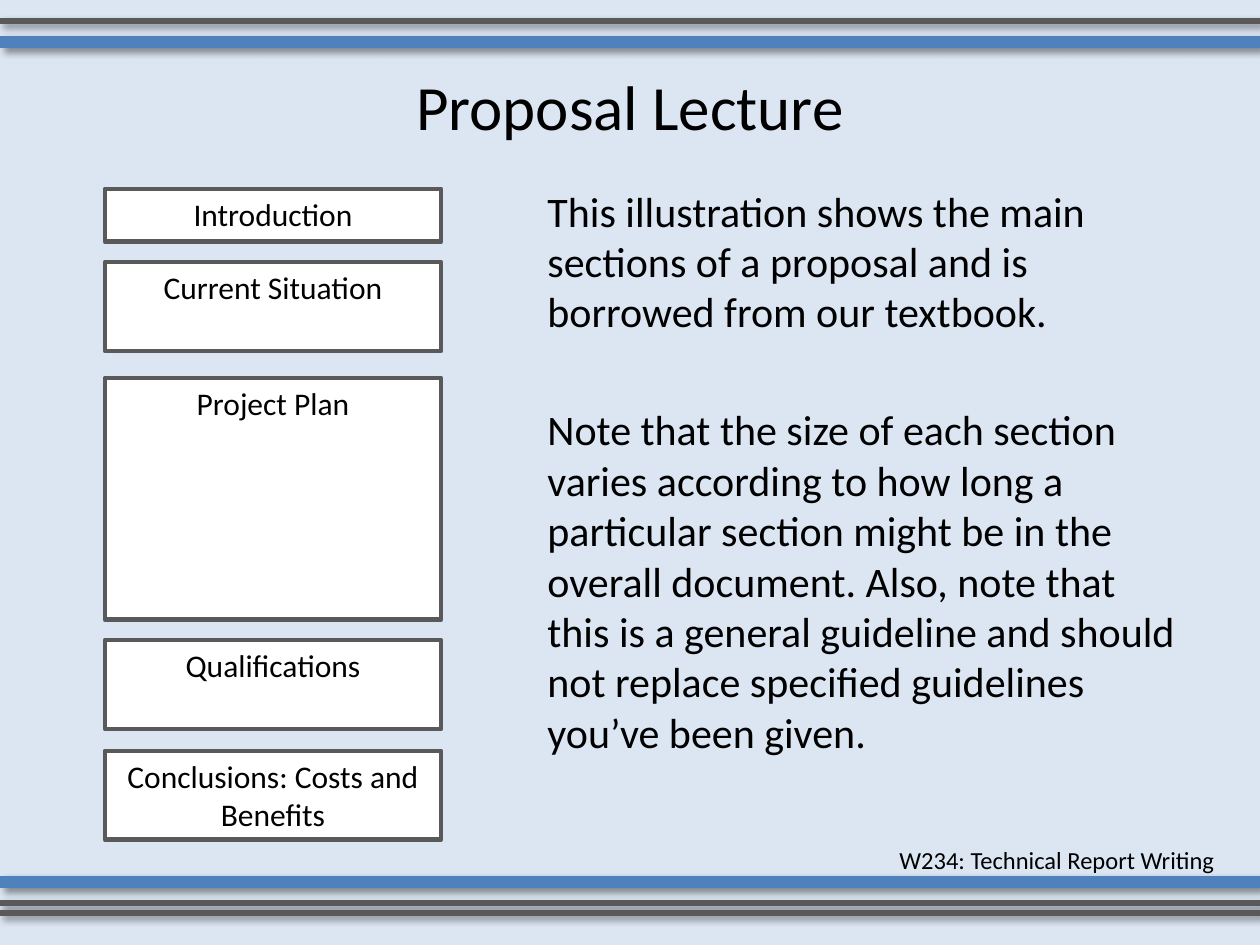
from dataclasses import dataclass

from lxml.etree import SubElement
from pptx import Presentation
from pptx.dml.color import RGBColor as Rgb
from pptx.enum.shapes import MSO_CONNECTOR as Link, MSO_SHAPE as Form
from pptx.enum.text import MSO_ANCHOR as Anchor, PP_ALIGN as Align
from pptx.oxml.ns import qn
from pptx.util import Emu, Pt

SCALE = 914400 / 126  # EMU in one px
WIDE, HIGH = 1260, 945


@dataclass(frozen=True)
class Theme:
    back: str = "DCE6F2"
    blue: str = "4F81BD"
    gray: str = "595959"
    white: str = "FFFFFF"
    ink: str = "000000"
    font: str = "Calibri"
    title: int = 36
    body: int = 24
    label: int = 18
    foot: int = 14
    thick: float = 7
    thin: float = 3.5
    edge: float = 2.75


@dataclass(frozen=True)
class Rule:
    y: int
    color: str
    width: float


@dataclass(frozen=True)
class Part:
    name: str
    top: int
    high: int


THEME = Theme()

RULES = [
    Rule(42, THEME.blue, THEME.thick),
    Rule(882, THEME.blue, THEME.thick),
    Rule(21, THEME.gray, THEME.thin),
    Rule(903, THEME.gray, THEME.thin),
    Rule(913, THEME.gray, THEME.thin),
]

PARTS = [
    Part("Introduction", 189, 53),
    Part("Current Situation", 262, 89),
    Part("Project Plan", 378, 242),
    Part("Qualifications", 640, 89),
    Part("Conclusions: Costs and Benefits", 751, 89),
]

NOTES = [
    "This illustration shows the main sections of a proposal and is "
    "borrowed from our textbook.",
    "Note that the size of each section varies according to how long a "
    "particular section might be in the overall document. Also, note that "
    "this is a general guideline and should not replace specified "
    "guidelines you’ve been given.",
]


def px(num: int) -> Emu:
    return Emu(round(num * SCALE))


def style(frame, size: int, align=Align.LEFT, anchor=Anchor.TOP) -> None:
    frame.word_wrap = True
    frame.vertical_anchor = anchor
    for para in frame.paragraphs:
        para.alignment = align
        for run in para.runs:
            run.font.name = THEME.font
            run.font.size = Pt(size)
            run.font.color.rgb = Rgb.from_string(THEME.ink)


def add_rule(slide, rule: Rule) -> None:
    line = slide.shapes.add_connector(
        Link.STRAIGHT, px(0), px(rule.y), px(WIDE), px(rule.y))
    line.line.color.rgb = Rgb.from_string(rule.color)
    line.line.width = Pt(rule.width)
    # Soft shadow, down and to the right
    props = line._element.spPr
    glow = SubElement(SubElement(props, qn("a:effectLst")), qn("a:outerShdw"),
                      blurRad=str(Pt(4)), dist=str(Pt(3)), dir="2700000",
                      algn="tl", rotWithShape="0")
    tint = SubElement(glow, qn("a:srgbClr"), val=THEME.ink)
    SubElement(tint, qn("a:alpha"), val="40000")


def add_part(slide, part: Part) -> None:
    box = slide.shapes.add_shape(
        Form.RECTANGLE, px(105), px(part.top), px(336), px(part.high))
    box.shadow.inherit = False
    box.fill.solid()
    box.fill.fore_color.rgb = Rgb.from_string(THEME.white)
    box.line.color.rgb = Rgb.from_string(THEME.gray)
    box.line.width = Pt(THEME.edge)
    box.text_frame.text = part.name
    style(box.text_frame, THEME.label, Align.CENTER)


def add_text(slide, area: tuple[int, int, int, int], text: str, size: int):
    frame = slide.shapes.add_textbox(*map(px, area)).text_frame
    frame.text = text
    style(frame, size)
    return frame


def main() -> None:
    deck = Presentation()
    deck.slide_width, deck.slide_height = px(WIDE), px(HIGH)
    slide = deck.slides.add_slide(deck.slide_layouts[5])
    slide.background.fill.solid()
    slide.background.fill.fore_color.rgb = Rgb.from_string(THEME.back)

    # Title
    title = slide.shapes.title
    title.left, title.top, title.width, title.height = map(
        px, (63, 63, 1134, 84))
    title.text_frame.text = "Proposal Lecture"
    style(title.text_frame, THEME.title, Align.CENTER, Anchor.MIDDLE)

    # Notes on the right, set apart by spacing
    notes = add_text(slide, (535, 179, 661, 665), "\n".join(NOTES), THEME.body)
    for para in notes.paragraphs[1:]:
        para.space_before = Pt(38.6)

    # Rules at head and foot
    for rule in RULES:
        add_rule(slide, rule)

    # Course name
    add_text(slide, (887, 839, 368, 43), "W234: Technical Report Writing",
             THEME.foot)

    # Proposal sections
    for part in PARTS:
        add_part(slide, part)

    deck.save("out.pptx")


if __name__ == "__main__":
    main()
